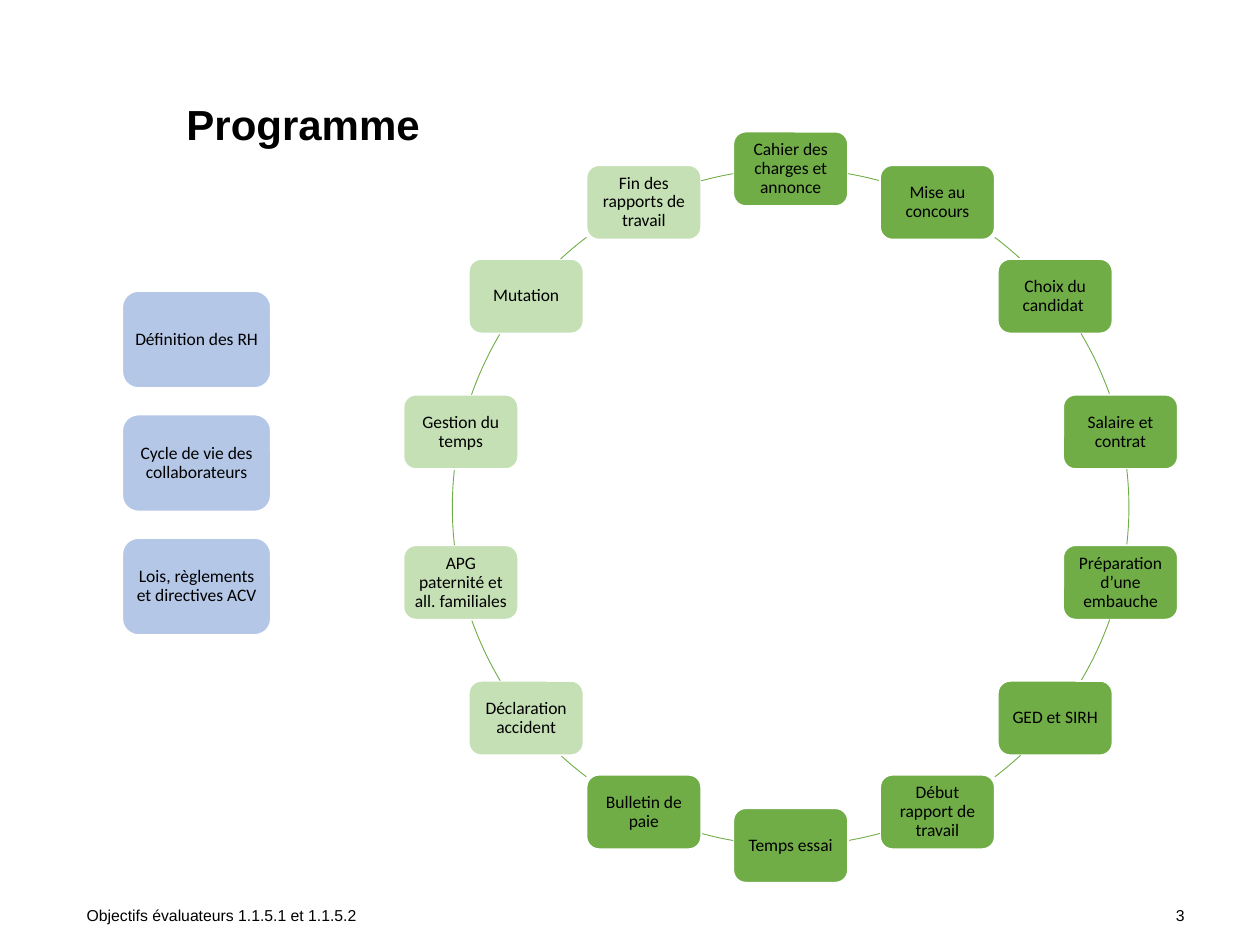
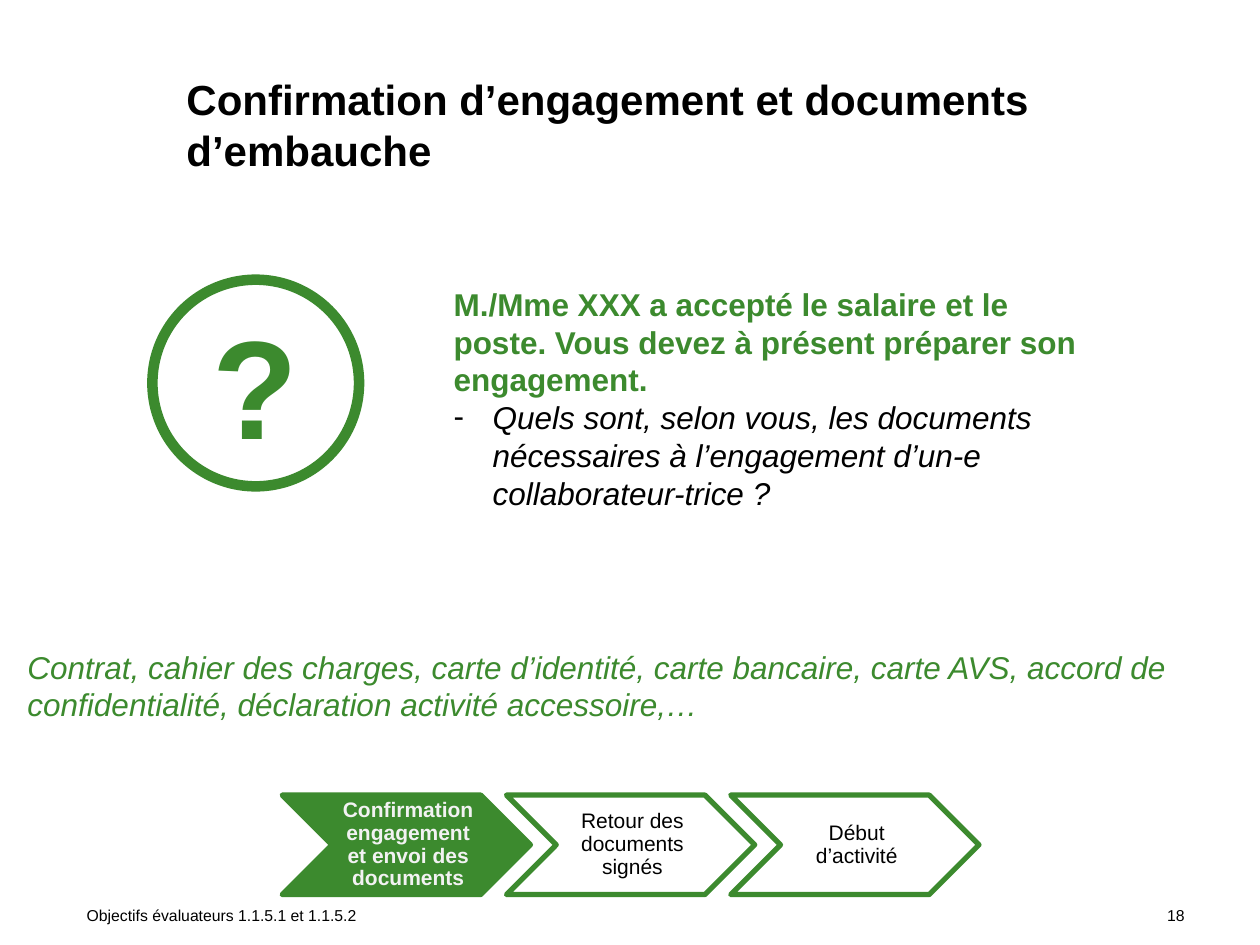
import math

import pptx
import pptx.dml.color
import pptx.enum.shapes
import pptx.enum.text
import pptx.oxml.ns
import pptx.util
from lxml import etree

Inches, Pt = pptx.util.Inches, pptx.util.Pt
SHAPES = pptx.enum.shapes.MSO_SHAPE
ALIGN = pptx.enum.text.PP_ALIGN
ANCHOR = pptx.enum.text.MSO_ANCHOR
AUTO_SIZE = pptx.enum.text.MSO_AUTO_SIZE
qn = pptx.oxml.ns.qn

# Content
FOOTER = "Objectifs évaluateurs 1.1.5.1 et 1.1.5.2"
PROGRAMME = {"title": "Programme", "number": "3"}
THEMES = [
    "Définition des RH",
    "Cycle de vie des collaborateurs",
    "Lois, règlements et directives ACV",
]
# Clockwise from the top: (step, colour)
CYCLE = [
    ("Cahier des charges et annonce", "leaf"),
    ("Mise au concours", "leaf"),
    ("Choix du candidat ", "leaf"),
    ("Salaire et contrat", "leaf"),
    ("Préparation d’une embauche", "leaf"),
    ("GED et SIRH", "leaf"),
    ("Début rapport de travail", "leaf"),
    ("Temps essai", "leaf"),
    ("Bulletin de paie", "leaf"),
    ("Déclaration accident", "pale"),
    ("APG paternité et all. familiales", "pale"),
    ("Gestion du temps", "pale"),
    ("Mutation", "pale"),
    ("Fin des rapports de travail", "pale"),
]
HIRING = {
    "title": "Confirmation d’engagement et documents d’embauche",
    "number": "18",
    "situation": "M./Mme XXX a accepté le salaire et le poste. "
                 "Vous devez à présent préparer son engagement.",
    "question": "Quels sont, selon vous, les documents nécessaires "
                "à l’engagement d’un-e collaborateur-trice ?",
    "answer": "Contrat, cahier des charges, carte d’identité, carte bancaire, "
              "carte AVS, accord de confidentialité, "
              "déclaration activité accessoire,…",
}
# (stage, fill, text colour, bold)
STAGES = [
    ("Confirmation engagement et envoi des documents", "green", "light", True),
    ("Retour des documents signés", "white", "black", False),
    ("Début d’activité", "white", "black", False),
]

# Style
COLORS = {
    "black": "000000", "white": "FFFFFF", "light": "F2F2F2", "green": "3C8A2E",
    "leaf": "70AD47", "pale": "C5E0B4", "blue": "B4C7E7",
}
TITLE_LAYOUT, BODY_LAYOUT = 5, 1

# Geometry, in inches
RING_LEFT, RING_TOP, RING_SIZE = 3.59, 1.34, 5.37
RING_RADIUS = RING_SIZE / 2
STEP_W, STEP_H = 0.91, 0.59
STEP_ANGLE = 2 * math.pi / len(CYCLE)
ARC_SAMPLES = 1000
THEME_TOP, THEME_PITCH = 2.31, 0.98
STAGE_LEFT, STAGE_PITCH = 2.24, 1.78


def color(name):
    return pptx.dml.color.RGBColor.from_string(COLORS[name])


def place(part, left, top, width, height):
    part.left, part.top = Inches(left), Inches(top)
    part.width, part.height = Inches(width), Inches(height)


def write(paragraph, text, size, ink="black", face="Arial",
          bold=False, italic=False):
    run = paragraph.add_run()
    run.text = text
    font = run.font
    font.name, font.size, font.bold, font.italic = face, Pt(size), bold, italic
    font.color.rgb = color(ink)


def add_label(slide, box, text, size, align=ALIGN.LEFT, **style):
    frame = slide.shapes.add_textbox(*map(Inches, box)).text_frame
    frame.word_wrap = True
    frame.paragraphs[0].alignment = align
    write(frame.paragraphs[0], text, size, **style)


def add_card(slide, kind, box, text, size, fill, line, line_width,
             insets=None, spacing=0.9, **style):
    card = slide.shapes.add_shape(kind, *map(Inches, box))
    card.shadow.inherit = False
    card.fill.solid()
    card.fill.fore_color.rgb = color(fill)
    card.line.color.rgb = color(line)
    card.line.width = Pt(line_width)
    frame = card.text_frame
    frame.word_wrap = True
    frame.vertical_anchor = ANCHOR.MIDDLE
    if insets:
        (frame.margin_left, frame.margin_top,
         frame.margin_right, frame.margin_bottom) = map(Inches, insets)
    paragraph = frame.paragraphs[0]
    paragraph.alignment = ALIGN.CENTER
    paragraph.line_spacing = spacing
    write(paragraph, text, size, **style)
    return card


def add_rounded(slide, box, text, fill):
    add_card(slide, SHAPES.ROUNDED_RECTANGLE, box, text, 10, fill, "white", 1,
             insets=[0.04] * 4, face="Calibri")


def start_slide(deck, layout, content):
    """Add a slide with its title, footer and number."""
    slide = deck.slides.add_slide(deck.slide_layouts[layout])
    title = slide.shapes.title
    place(title, 1.38, 0.6, 8.12, 0.77)
    frame = title.text_frame
    frame.auto_size = AUTO_SIZE.NONE
    frame.vertical_anchor = ANCHOR.MIDDLE
    frame.paragraphs[0].alignment = ALIGN.LEFT
    write(frame.paragraphs[0], content["title"], 24, bold=True)
    add_label(slide, (0.59, 7.14, 5.67, 0.22), FOOTER, 9)
    add_label(slide, (9.02, 7.14, 0.48, 0.22), content["number"], 9, ALIGN.RIGHT)
    return slide


def ring_point(angle):
    """Point inside the ring's square, at an angle clockwise from the top."""
    return (RING_RADIUS * (1 + math.sin(angle)),
            RING_RADIUS * (1 - math.cos(angle)))


def outside_step(angle, step_angle):
    (x, y), (step_x, step_y) = ring_point(angle), ring_point(step_angle)
    return abs(x - step_x) > STEP_W / 2 or abs(y - step_y) > STEP_H / 2


def arc_points(position):
    """Bézier points of the ring between a step and the next one."""
    first, last = position * STEP_ANGLE, (position + 1) * STEP_ANGLE
    angles = [first + STEP_ANGLE * i / ARC_SAMPLES for i in range(ARC_SAMPLES)]
    visible = [angle for angle in angles
               if outside_step(angle, first) and outside_step(angle, last)]
    start, end = visible[0], visible[-1]
    reach = 4 / 3 * math.tan((end - start) / 4) * RING_RADIUS
    (x0, y0), (x3, y3) = ring_point(start), ring_point(end)
    return [(x0, y0),
            (x0 + reach * math.cos(start), y0 + reach * math.sin(start)),
            (x3 - reach * math.cos(end), y3 - reach * math.sin(end)),
            (x3, y3)]


def add_arc(slide, position):
    points = [(Inches(x), Inches(y)) for x, y in arc_points(position)]
    builder = slide.shapes.build_freeform(*points[0])
    builder.add_line_segments(points[-1:], close=False)
    arc = builder.convert_to_shape()
    place(arc, RING_LEFT, RING_TOP, RING_SIZE, RING_SIZE)
    arc.shadow.inherit = False
    arc.fill.background()
    arc.line.color.rgb = color("leaf")
    arc.line.width = Pt(0.5)
    # Turn the straight segment into a curve in the ring's square
    outline = arc._element.spPr.find(".//" + qn("a:path"))
    for side in ("w", "h"):
        outline.set(side, str(Inches(RING_SIZE)))
    for segment in list(outline):
        outline.remove(segment)
    for tag, stops in (("a:moveTo", points[:1]), ("a:cubicBezTo", points[1:])):
        segment = etree.SubElement(outline, qn(tag))
        for x, y in stops:
            etree.SubElement(segment, qn("a:pt"), x=str(int(x)), y=str(int(y)))


def set_bullet(paragraph, indent, char=None):
    properties = paragraph._p.get_or_add_pPr()
    properties.set("marL", str(Inches(indent)))
    properties.set("indent", str(-Inches(indent)))
    bullet = etree.SubElement(properties, qn("a:buChar" if char else "a:buNone"))
    if char:
        bullet.set("char", char)


def build_programme(deck):
    slide = start_slide(deck, TITLE_LAYOUT, PROGRAMME)
    # Life cycle ring
    for position, (step, fill) in enumerate(CYCLE):
        x, y = ring_point(position * STEP_ANGLE)
        add_rounded(slide, (RING_LEFT + x - STEP_W / 2, RING_TOP + y - STEP_H / 2,
                            STEP_W, STEP_H), step, fill)
        add_arc(slide, position)
    # Themes on the left
    for row, theme in enumerate(THEMES):
        add_rounded(slide, (0.97, THEME_TOP + row * THEME_PITCH, 1.18, 0.77),
                    theme, "blue")


def build_hiring(deck):
    slide = start_slide(deck, BODY_LAYOUT, HIRING)
    # Question mark
    add_card(slide, SHAPES.OVAL, (1.21, 2.22, 1.64, 1.64), "?", 80,
             "white", "green", 6, spacing=1.0, ink="green", bold=True)
    # Situation and question
    exercise = slide.placeholders[1]
    place(exercise, 3.5, 2.21, 5.28, 1.92)
    frame = exercise.text_frame
    frame.auto_size = AUTO_SIZE.SHAPE_TO_FIT_TEXT
    situation, question = frame.paragraphs[0], frame.add_paragraph()
    for paragraph in (situation, question):
        paragraph.space_before = Pt(0)
    set_bullet(situation, 0)
    set_bullet(question, 0.31, "-")
    write(situation, HIRING["situation"], 18, ink="green", bold=True)
    write(question, HIRING["question"], 18, italic=True)
    # Answer
    add_label(slide, (0.12, 5.09, 9.76, 0.71), HIRING["answer"], 18,
              ink="green", italic=True)
    # Stages
    for column, (stage, fill, ink, bold) in enumerate(STAGES):
        box = (STAGE_LEFT + column * STAGE_PITCH, 6.31, 1.97, 0.79)
        chevron = add_card(slide, SHAPES.CHEVRON, box, stage, 12, fill, "green", 3,
                           insets=(0.05, 0.02, 0.02, 0.02), ink=ink, bold=bold)
        outline = chevron._element.spPr.find(qn("a:ln"))
        etree.SubElement(outline, qn("a:round"))


def main():
    deck = pptx.Presentation()
    deck.slide_width, deck.slide_height = Inches(10), Inches(7.5)
    build_programme(deck)
    build_hiring(deck)
    deck.save("out.pptx")


if __name__ == "__main__":
    main()
